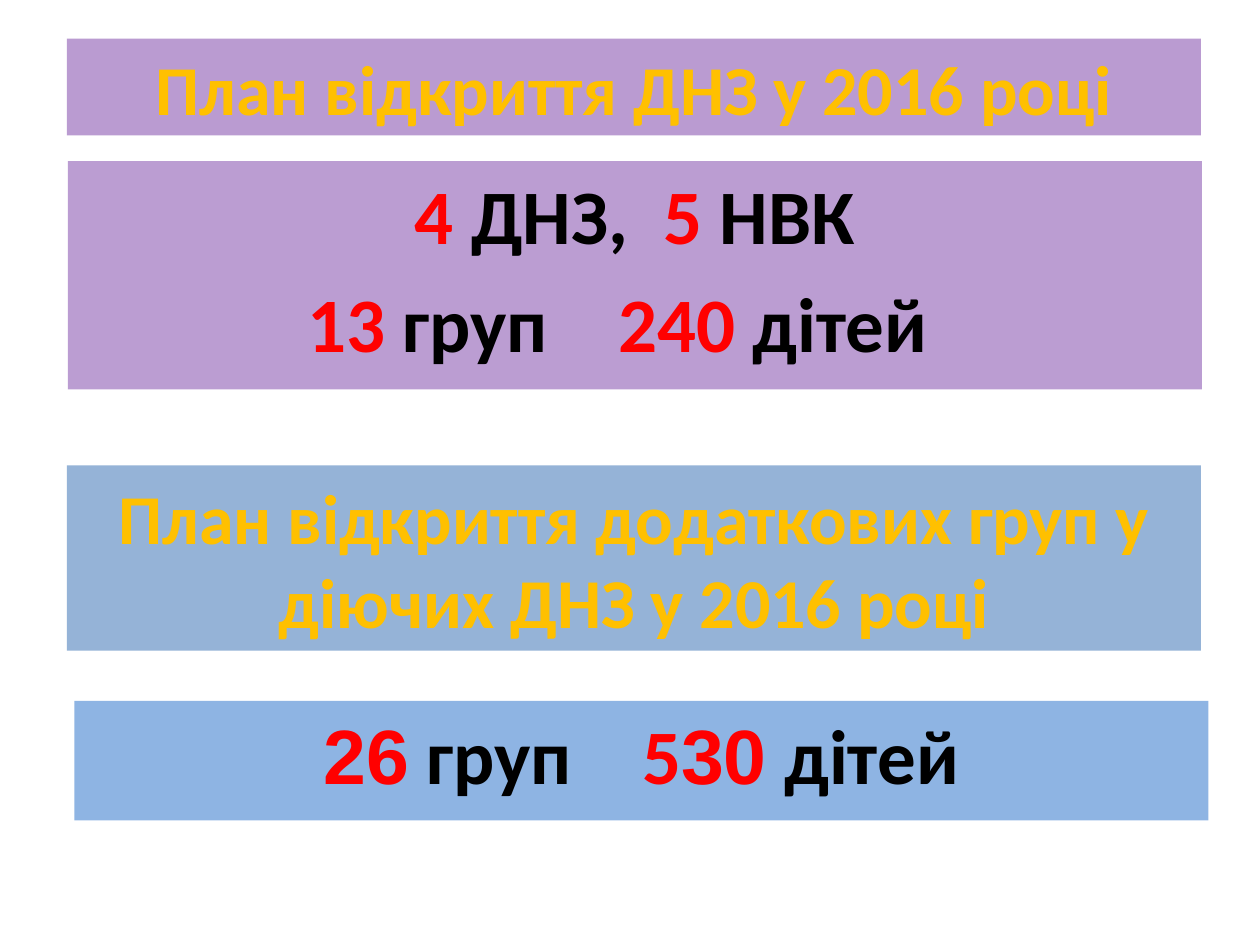
from pptx import Presentation
from pptx.dml.color import RGBColor
from pptx.enum.shapes import MSO_SHAPE as Shape
from pptx.enum.text import MSO_ANCHOR as Anchor, PP_ALIGN as Align
from pptx.oxml.ns import qn
from pptx.util import Cm, Pt
from lxml import etree

GOLD, RED, BLACK = "FFC000", "FF0000", "000000"
PURPLE, STEEL, SKY = "7030A0", "95B3D7", "8EB4E3"


def rgb(color):
    return RGBColor.from_string(color)


def add_band(left, top, height, fill, lines, size, anchor, opacity=100):
    """Add a filled band; each line is a list of (text, colour, font, letter gap) runs."""
    band = slide.shapes.add_shape(Shape.RECTANGLE, Cm(left), Cm(top), Cm(22.86), Cm(height))
    band.shadow.inherit = False
    band.line.fill.background()
    band.fill.solid()
    band.fill.fore_color.rgb = rgb(fill)
    if opacity < 100:
        color = band.fill._xPr.find(qn("a:solidFill"))[0]
        etree.SubElement(color, qn("a:alpha")).set("val", str(opacity * 1000))

    text_frame = band.text_frame
    text_frame.word_wrap = True
    text_frame.vertical_anchor = anchor
    for index, line in enumerate(lines):
        paragraph = text_frame.add_paragraph() if index else text_frame.paragraphs[0]
        paragraph.alignment = Align.CENTER
        if index:
            paragraph.space_before = Pt(size * 0.2)
        for text, color, font, gap in line:
            run = paragraph.add_run()
            run.text = text
            run.font.name = font
            run.font.size = Pt(size)
            run.font.bold = True
            run.font.color.rgb = rgb(color)
            if gap:
                run._r.get_or_add_rPr().set("spc", str(gap * 100))
    return band


presentation = Presentation()
presentation.slide_width = Cm(25.4)
presentation.slide_height = Cm(19.05)
slide = presentation.slides.add_slide(presentation.slide_layouts[6])

# Letter gaps in points widen the single space between two figures
WIDE, NARROW = 30, 10

new_title = [[("План відкриття ДНЗ у 2016 році", GOLD, "Calibri", 0)]]
new_figures = [
    [
        ("4", RED, "Calibri", 0),
        (" ДНЗ,", BLACK, "Calibri", 0),
        (" ", BLACK, "Calibri", NARROW),
        ("5", RED, "Calibri", 0),
        (" НВК", BLACK, "Calibri", 0),
    ],
    [
        ("13", RED, "Calibri", 0),
        (" груп", BLACK, "Calibri", 0),
        (" ", BLACK, "Calibri", WIDE),
        ("240", RED, "Calibri", 0),
        (" дітей", BLACK, "Calibri", 0),
    ],
]
extra_title = [[("План відкриття додаткових груп у діючих ДНЗ у 2016 році", GOLD, "Calibri", 0)]]
extra_figures = [
    [
        ("26", RED, "Arial", 0),
        (" груп", BLACK, "Calibri", 0),
        (" ", BLACK, "Calibri", WIDE),
        ("5", RED, "Calibri", 0),
        ("30", RED, "Arial", 0),
        (" дітей", BLACK, "Calibri", 0),
    ],
]

add_band(1.35, 0.78, 1.95, PURPLE, new_title, 40, Anchor.MIDDLE, opacity=48)
new_band = add_band(1.37, 3.25, 4.6, PURPLE, new_figures, 44, Anchor.TOP, opacity=47)
add_band(1.35, 9.38, 3.74, STEEL, extra_title, 40, Anchor.MIDDLE)
add_band(1.5, 14.13, 2.41, SKY, extra_figures, 44, Anchor.TOP)

# The second line of figures sits slightly left of centre
groups_line = new_band.text_frame.paragraphs[1]
groups_line._p.get_or_add_pPr().set("marR", str(Cm(0.7)))

presentation.save("out.pptx")
